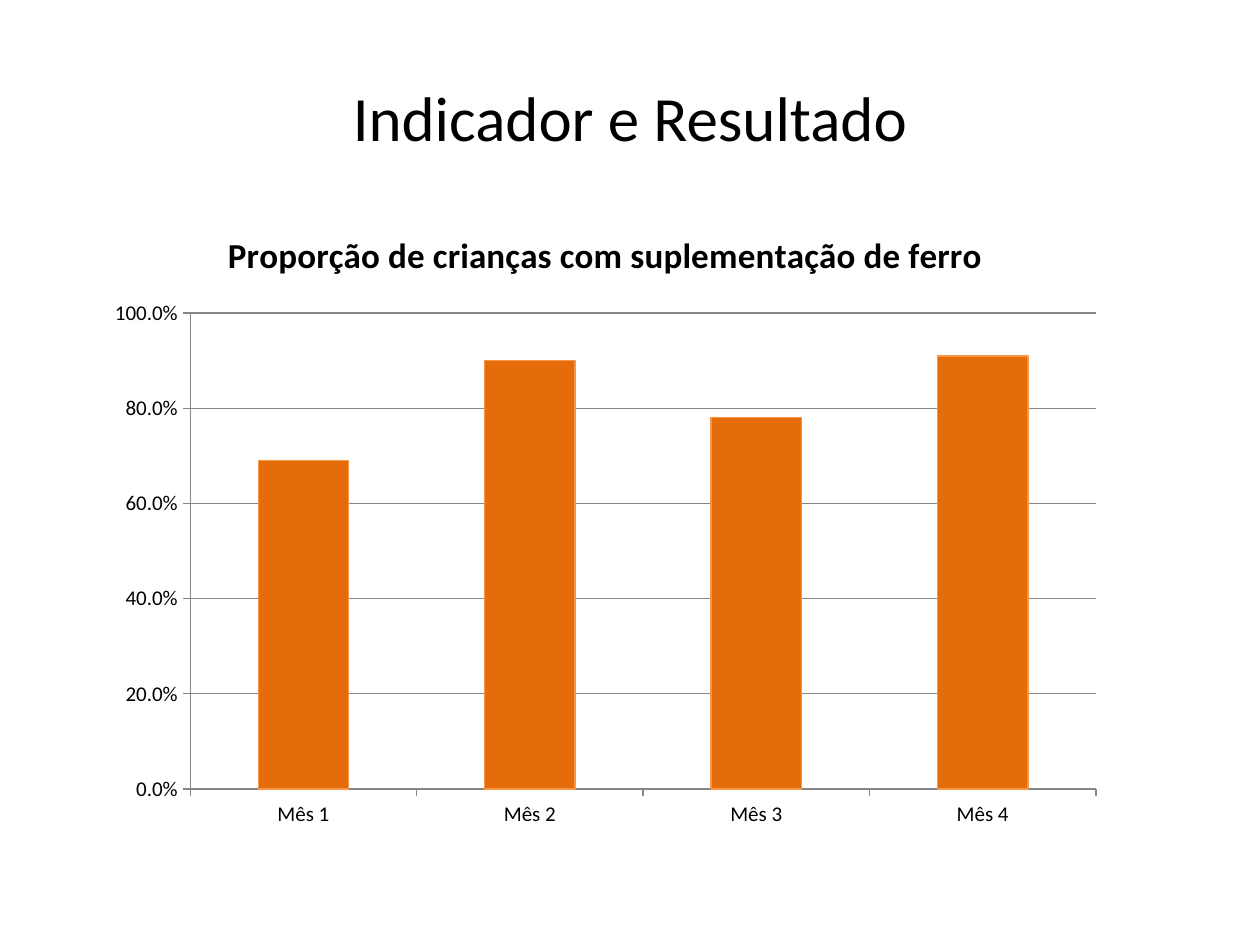
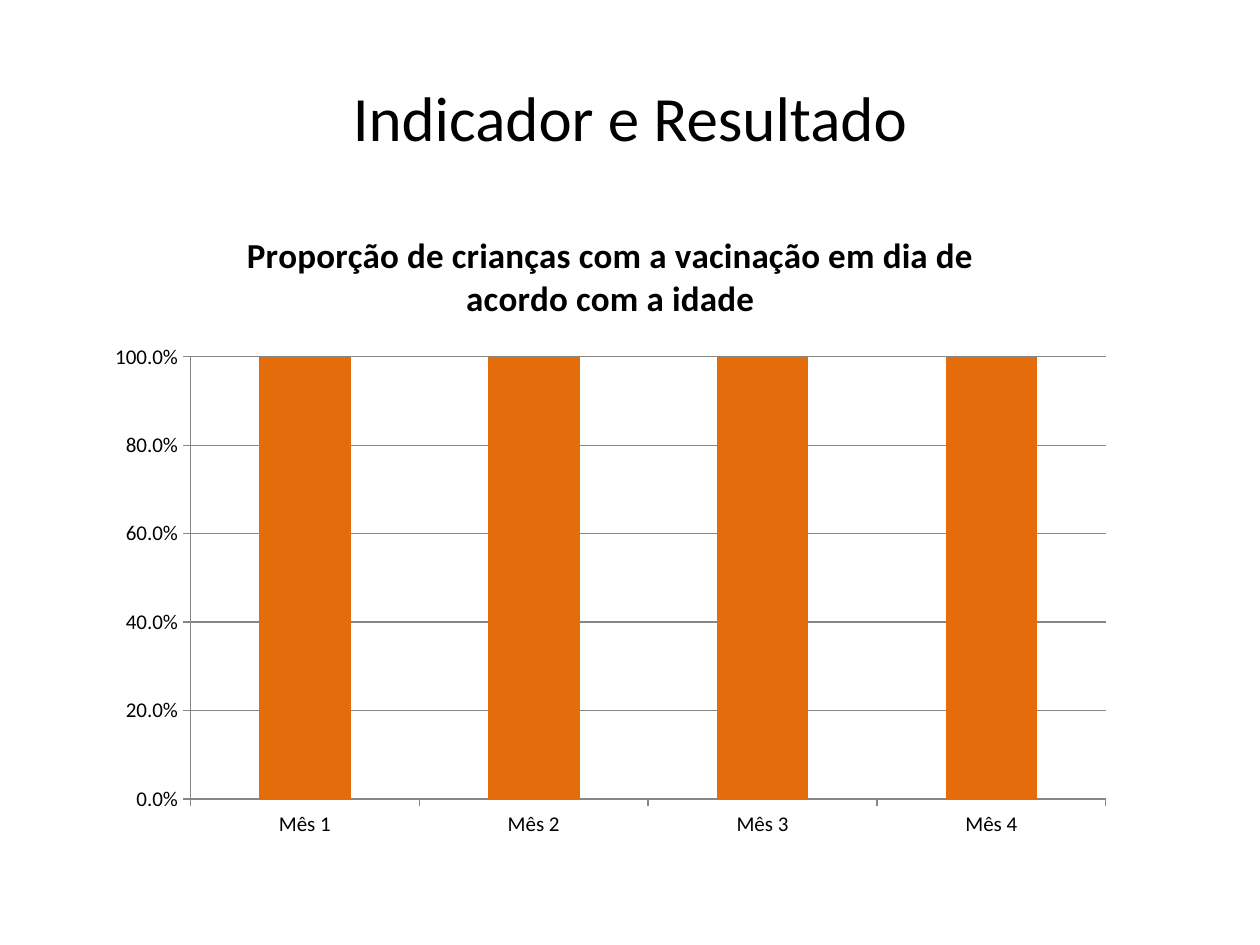
from pptx import Presentation
from pptx.chart.data import CategoryChartData
from pptx.dml.color import RGBColor
from pptx.enum.chart import XL_CHART_TYPE, XL_TICK_MARK
from pptx.enum.text import MSO_ANCHOR, PP_ALIGN
from pptx.util import Pt

# Shared style
BLACK = RGBColor(0x00, 0x00, 0x00)
ORANGE = RGBColor(0xE4, 0x6C, 0x0A)
LIGHT_ORANGE = RGBColor(0xF7, 0x96, 0x46)
GRAY = RGBColor(0x86, 0x86, 0x86)
FONT = "Calibri"
COLUMNS = XL_CHART_TYPE.COLUMN_CLUSTERED
TICK_OUTSIDE = XL_TICK_MARK.OUTSIDE
TICK_NONE = XL_TICK_MARK.NONE
CENTER = PP_ALIGN.CENTER
MIDDLE = MSO_ANCHOR.MIDDLE

# Content
HEADING = "Indicador e Resultado"
MONTHS = [f"Mês {number}" for number in range(1, 5)]
CHART_LEFT, CHART_TOP = 54, 116.64
INDICATORS = [
    {"title": "Proporção de crianças com suplementação de ferro",
     "values": (0.69, 0.9, 0.78, 0.91),
     "size": (583.92, 362.88), "outline": LIGHT_ORANGE},
    {"title": "Proporção de crianças com a vacinação em dia de acordo com a idade",
     "values": (1, 1, 1, 1),
     "size": (589.68, 368.64), "outline": None},
]


def style_font(font, size, bold=False, color=BLACK):
    font.name = FONT
    font.size = Pt(size)
    font.bold = bold
    font.color.rgb = color


def write_text(text_frame, text, *, size, bold=False, color=BLACK, align=CENTER):
    paragraph = text_frame.paragraphs[0]
    paragraph.alignment = align
    run = paragraph.add_run()
    run.text = text
    style_font(run.font, size, bold, color)


def add_heading(slide):
    box = slide.shapes.add_textbox(Pt(36), Pt(21.6), Pt(648), Pt(90))
    box.text_frame.word_wrap = True
    box.text_frame.vertical_anchor = MIDDLE
    write_text(box.text_frame, HEADING, size=36)


def style_line(line, color, width=0.75):
    line.color.rgb = color
    line.width = Pt(width)


def style_axis(axis):
    axis.major_tick_mark = TICK_OUTSIDE
    axis.minor_tick_mark = TICK_NONE
    style_font(axis.tick_labels.font, 12)
    style_line(axis.format.line, GRAY)


def add_indicator_chart(slide, title, values, size, outline):
    data = CategoryChartData(number_format="0.0%")
    data.categories = MONTHS
    data.add_series(title, values)
    width, height = size
    chart = slide.shapes.add_chart(
        COLUMNS, Pt(CHART_LEFT), Pt(CHART_TOP), Pt(width), Pt(height), data).chart
    style_font(chart.font, 10)
    chart.has_legend = False

    # Chart title
    chart.has_title = True
    chart.chart_title.include_in_layout = False
    write_text(chart.chart_title.text_frame, title, size=20, bold=True)

    # Axes
    style_axis(chart.category_axis)
    value_axis = chart.value_axis
    style_axis(value_axis)
    value_axis.minimum_scale = 0
    value_axis.maximum_scale = 1
    value_axis.major_unit = 0.2
    value_axis.tick_labels.number_format = "0.0%"
    value_axis.tick_labels.number_format_is_linked = False
    value_axis.has_major_gridlines = True
    style_line(value_axis.major_gridlines.format.line, GRAY)

    # Columns
    plot = chart.plots[0]
    plot.gap_width = 150
    plot.vary_by_categories = False
    series = plot.series[0]
    series.format.fill.solid()
    series.format.fill.fore_color.rgb = ORANGE
    if outline is None:
        series.format.line.fill.background()
    else:
        style_line(series.format.line, outline)


def main():
    presentation = Presentation()
    presentation.slide_width = Pt(720)
    presentation.slide_height = Pt(540)
    blank_layout = presentation.slide_layouts[6]
    for indicator in INDICATORS:
        slide = presentation.slides.add_slide(blank_layout)
        add_heading(slide)
        add_indicator_chart(slide, **indicator)
    presentation.save("out.pptx")


if __name__ == "__main__":
    main()
